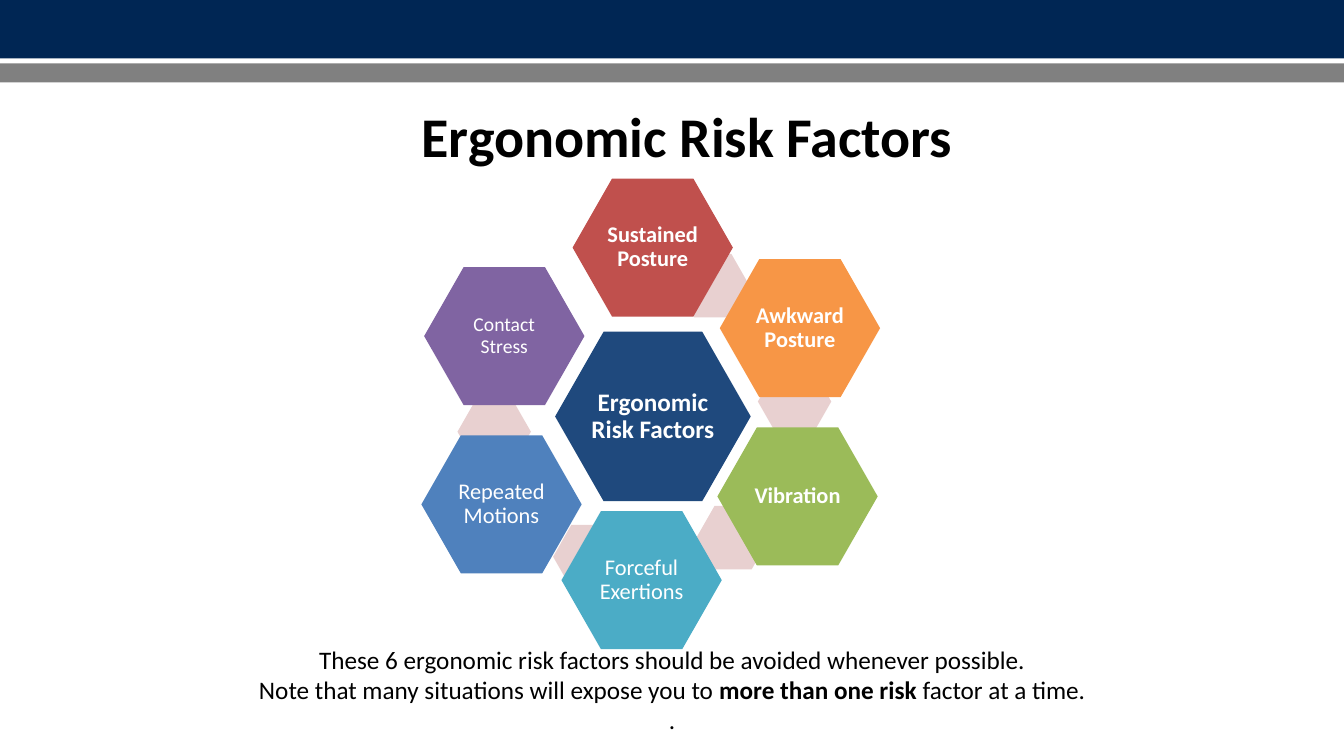
from collections import namedtuple
from dataclasses import dataclass

from pptx import Presentation
from pptx.dml.color import RGBColor
from pptx.enum.shapes import MSO_SHAPE as Shape
from pptx.enum.text import MSO_ANCHOR as Anchor, PP_ALIGN as Align
from pptx.util import Cm, Pt

Box = namedtuple("Box", "left top width height")  # centimetres
Factor = namedtuple("Factor", "label fill left top size bold")


@dataclass(frozen=True)
class Theme:
    font: str = "Calibri"
    navy: str = "002654"
    grey: str = "808080"
    core: str = "1F497D"
    link: str = "E8D0D0"
    light: str = "FFFFFF"
    dark: str = "000000"
    title_size: int = 40
    body_size: int = 18
    factor_size: int = 16
    small_size: int = 14


THEME = Theme()

# Positions are offsets from the corner of the ring.
FACTORS = [
    Factor("Sustained Posture", "C0504D", 3.81, 0, THEME.factor_size, True),
    Factor("Awkward Posture", "F79646", 7.52, 2.03, THEME.factor_size, True),
    Factor("Vibration", "9BBB59", 7.46, 6.27, THEME.factor_size, True),
    Factor("Forceful Exertions", "4BACC6", 3.53, 8.38, THEME.factor_size, False),
    Factor("Repeated Motions", "4F81BD", 0, 6.47, THEME.factor_size, False),
    Factor("Contact Stress", "8064A2", 0.07, 2.23, THEME.small_size, False),
]
LINKS = [(6.42, 1.9), (8.48, 4.82), (6.93, 8.25), (3.32, 8.73), (0.91, 5.58)]
NOTES = [
    [("These 6 ergonomic risk factors should be avoided whenever possible.", False)],
    [("Note that many situations will expose you to ", False),
     ("more than one risk ", True), ("factor at a time.", False)],
    [(".", False)],
]


def lengths(box):
    return [Cm(value) for value in box]


def style(para, size, color, bold=False):
    para.alignment = Align.CENTER
    para.font.name = THEME.font
    para.font.size = Pt(size)
    para.font.bold = bold
    para.font.color.rgb = RGBColor.from_string(color)


def add_filled(page, kind, box, fill):
    shape = page.shapes.add_shape(kind, *lengths(box))
    shape.shadow.inherit = False
    shape.fill.solid()
    shape.fill.fore_color.rgb = RGBColor.from_string(fill)
    shape.line.fill.background()
    return shape


def add_hexagon(page, box, fill):
    hexagon = add_filled(page, Shape.HEXAGON, box, fill)
    hexagon.adjustments[0] = 0.286
    return hexagon


def add_labelled_hexagon(page, box, fill, label, size, bold):
    frame = add_hexagon(page, box, fill).text_frame
    frame.word_wrap = True
    frame.vertical_anchor = Anchor.MIDDLE
    frame.margin_left = frame.margin_right = Cm(0.05)
    frame.margin_top = frame.margin_bottom = Cm(0.05)
    para = frame.paragraphs[0]
    para.text = label
    para.line_spacing = 0.9
    style(para, size, THEME.light, bold)


def add_header(page, box):
    """Navy band above a thinner grey one, with a white gap between."""
    navy_height, grey_height = 1.47, 0.48
    add_filled(page, Shape.RECTANGLE, box._replace(height=navy_height), THEME.navy)
    grey_top = box.top + box.height - grey_height
    add_filled(page, Shape.RECTANGLE,
               box._replace(top=grey_top, height=grey_height), THEME.grey)


def add_ring(page, box):
    """Six risk factors around a core, with pale links behind them."""
    for left, top in LINKS:
        add_hexagon(page, Box(box.left + left, box.top + top, 1.85, 1.6), THEME.link)
    core = Box(box.left + 3.37, box.top + 3.86, 4.93, 4.27)
    add_labelled_hexagon(page, core, THEME.core, "Ergonomic Risk Factors",
                         THEME.body_size, True)
    for factor in FACTORS:
        place = Box(box.left + factor.left, box.top + factor.top, 4.04, 3.48)
        add_labelled_hexagon(page, place, factor.fill, factor.label,
                             factor.size, factor.bold)


def add_text(page, box, lines, size, bold=False):
    frame = page.shapes.add_textbox(*lengths(box)).text_frame
    frame.word_wrap = True
    for index, line in enumerate(lines):
        para = frame.add_paragraph() if index else frame.paragraphs[0]
        style(para, size, THEME.dark, bold)
        for text, strong in line:
            span = para.add_run()
            span.text = text
            if strong:
                span.font.bold = True


def main():
    deck = Presentation()
    deck.slide_width, deck.slide_height = Cm(33.87), Cm(19.05)
    page = deck.slides.add_slide(deck.slide_layouts[6])
    add_header(page, Box(0, 0, 33.87, 2.08))
    add_ring(page, Box(10.62, 4.5, 11.56, 11.86))
    add_text(page, Box(4.24, 16.1, 25.4, 2.57), NOTES, THEME.body_size)
    add_text(page, Box(10.24, 2.44, 14.15, 1.96),
             [[("Ergonomic Risk Factors", False)]], THEME.title_size, bold=True)
    deck.save("out.pptx")


if __name__ == "__main__":
    main()
